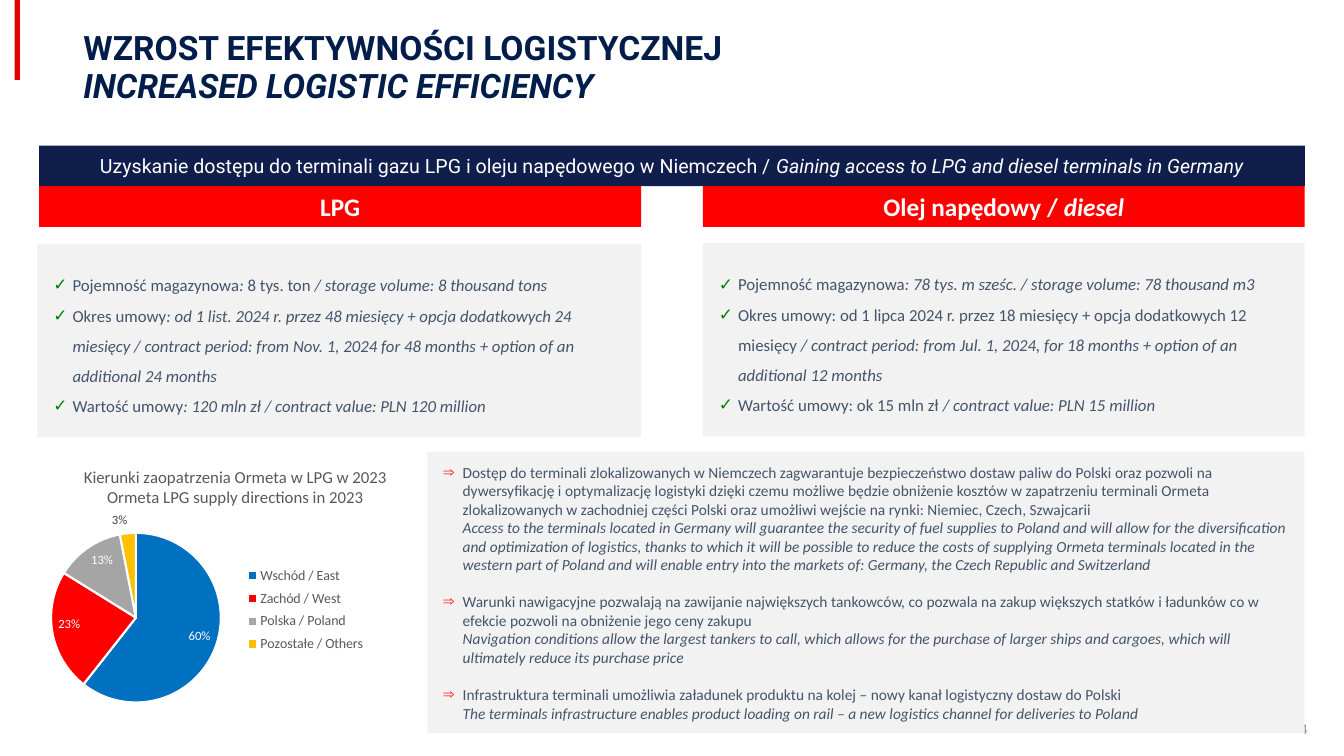
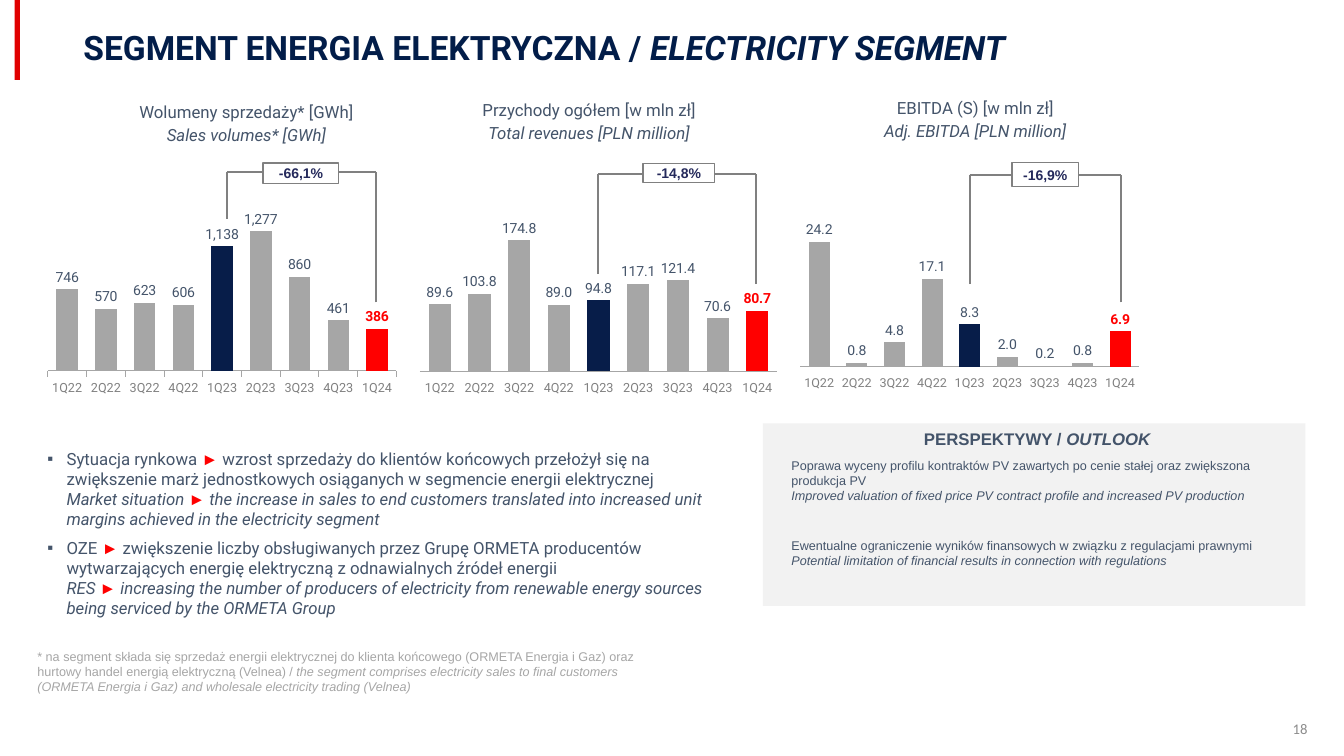
from dataclasses import dataclass

from lxml import etree
from pptx import Presentation
from pptx.chart.data import CategoryChartData
from pptx.dml.color import RGBColor
from pptx.enum import chart as ch, shapes, text
from pptx.oxml import ns
from pptx.util import Pt


@dataclass(frozen=True)
class Theme:
    accent: str = "E10000"
    title: str = "021D49"
    banner: str = "101E4B"
    red: str = "FF0000"
    panel: str = "F2F2F2"
    body: str = "44546A"
    white: str = "FFFFFF"
    number: str = "8C8C8C"
    footnote: str = "A6A6A6"
    check: str = "008000"
    bar: str = "A6A6A6"
    bar_base: str = "071D49"
    axis: str = "808080"
    bracket: str = "808080"
    change: str = "24295B"
    chart_title: str = "595959"
    pie_label: str = "404040"
    pie: tuple = ("0070C0", "FF0000", "A5A5A5", "FFC000")
    head: str = "Roboto"
    text: str = "Calibri"
    plain: str = "Arial"
    title_size: float = 24
    column_size: float = 18
    banner_size: float = 14
    body_size: float = 12
    detail_size: float = 11
    number_size: float = 10.5
    label_size: float = 10
    small_size: float = 9


T = Theme()
CENTER, RIGHT = text.PP_ALIGN.CENTER, text.PP_ALIGN.RIGHT
TOP, MIDDLE = text.MSO_ANCHOR.TOP, text.MSO_ANCHOR.MIDDLE
TEXT_INSETS = (17.3, 8.6)
PANEL_INSETS = (11.5, 14.4)
INDENT = 13.7
QUARTERS = ["1Q22", "2Q22", "3Q22", "4Q22", "1Q23", "2Q23", "3Q23", "4Q23", "1Q24"]


def points(*lengths):
    return [Pt(length) for length in lengths]


def rgb(value):
    return RGBColor.from_string(value)


def style(target, values):
    for name, value in values.items():
        setattr(target, name, value)


def set_font(font, name, size, color, **values):
    style(font, {"name": name, "size": Pt(size), **values})
    font.color.rgb = rgb(color)


def fill(target, color):
    target.fill.solid()
    target.fill.fore_color.rgb = rgb(color)


def add_bullet(paragraph, char, color):
    props = paragraph._p.get_or_add_pPr()
    props.set("marL", str(Pt(INDENT)))
    props.set("indent", str(-Pt(INDENT)))
    bullet_color = etree.SubElement(props, ns.qn("a:buClr"))
    etree.SubElement(bullet_color, ns.qn("a:srgbClr"), val=color)
    etree.SubElement(props, ns.qn("a:buFont"), typeface=T.plain)
    etree.SubElement(props, ns.qn("a:buChar"), char=char)


def write(frame, paragraphs, font, size, color, bold=False, align=None, line=None,
          before=0, bullet=None, insets=(7.2, 3.6), anchor=TOP):
    """Fill a frame; "_" switches italics and "►" becomes a red pointer."""
    side, edge = points(*insets)
    style(frame, {"word_wrap": True, "vertical_anchor": anchor, "margin_left": side,
                  "margin_right": side, "margin_top": edge, "margin_bottom": edge})
    for index, content in enumerate(paragraphs):
        paragraph = frame.add_paragraph() if index else frame.paragraphs[0]
        if bullet:
            add_bullet(paragraph, *bullet)
        style(paragraph, {"alignment": align, "line_spacing": line,
                          "space_before": Pt(before if index else 0)})
        for part_index, part in enumerate(content.split("_")):
            italic = part_index % 2 == 1
            marked = part.replace("►", "|►|").replace("\n", "|\n|")
            for piece in filter(None, marked.split("|")):
                if piece == "\n":
                    paragraph.add_line_break()
                    continue
                run = paragraph.add_run()
                run.text = piece
                if piece == "►":
                    set_font(run.font, T.plain, size, T.red)
                else:
                    set_font(run.font, font, size, color, bold=bold, italic=italic)


def add_text(slide, box, paragraphs, *args, **formats):
    write(slide.shapes.add_textbox(*points(*box)).text_frame, paragraphs, *args, **formats)


def add_block(slide, box, color, border=None):
    block = slide.shapes.add_shape(shapes.MSO_SHAPE.RECTANGLE, *points(*box))
    block.shadow.inherit = False
    fill(block, color)
    if border:
        block.line.color.rgb = rgb(border)
        block.line.width = Pt(1)
    else:
        block.line.fill.background()
    return block.text_frame


def add_line(slide, *ends):
    line = slide.shapes.add_connector(shapes.MSO_CONNECTOR.STRAIGHT, *points(*ends))
    line.line.color.rgb = rgb(T.bracket)
    line.line.width = Pt(1.5)
    etree.SubElement(line._element.spPr, ns.qn("a:effectLst"))


def add_base(deck, number, titles):
    slide = deck.slides.add_slide(deck.slide_layouts[6])
    add_block(slide, (10.4, 0, 3.8, 57), T.accent)
    add_text(slide, (685.5, 506, 255.5, 29), [str(number)], T.text, T.number_size,
             T.number, align=RIGHT, anchor=MIDDLE)
    for row, title in enumerate(titles):
        add_text(slide, (52.5, 14.4 + 27.4 * row, 882, 42), [title], T.head,
                 T.title_size, T.title, bold=True, line=0.9, anchor=MIDDLE)
    return slide


def set_layout(parent, after, inner=False, **place):
    """Give a chart part a fixed place; after is the tag it must follow, if any."""
    for old in parent.findall(ns.qn("c:layout")):
        parent.remove(old)
    layout = etree.Element(ns.qn("c:layout"))
    manual = etree.SubElement(layout, ns.qn("c:manualLayout"))
    if inner:
        etree.SubElement(manual, ns.qn("c:layoutTarget"), val="inner")
    for key in "xy":
        etree.SubElement(manual, ns.qn(f"c:{key}Mode"), val="edge")
    for key, value in place.items():
        etree.SubElement(manual, ns.qn(f"c:{key}"), val=str(value))
    if after:
        parent.find(ns.qn(after)).addnext(layout)
    else:
        parent.insert(0, layout)


def add_chart(slide, kind, box, categories, values, number_format, plot_area):
    """Add a one-series chart with value labels; return chart, plot and series."""
    data = CategoryChartData(number_format=number_format)
    data.categories = categories
    data.add_series("Series 1", values)
    chart = slide.shapes.add_chart(kind, *points(*box), data).chart
    style(chart, {"has_legend": False, "has_title": False})
    set_font(chart.font, T.text, T.label_size, T.chart_title)
    set_layout(chart._chartSpace.chart.plotArea, None, inner=True, **plot_area)
    plot = chart.plots[0]
    series = plot.series[0]
    style(series.data_labels, {"show_value": True, "show_percentage": False,
                               "number_format": number_format,
                               "number_format_is_linked": False})
    return chart, plot, series


def add_supply_pie(slide):
    chart, plot, series = add_chart(
        slide, ch.XL_CHART_TYPE.PIE, (27.4, 321, 303, 185),
        ["Wschód / East", "Zachód / West", "Polska / Poland", "Pozostałe / Others"],
        [0.6, 0.23, 0.13, 0.03], "0%", {"x": 0.03, "y": 0.32, "w": 0.4, "h": 0.66})
    plot.vary_by_categories = True
    for index, color in enumerate(T.pie):
        point = series.points[index]
        fill(point.format, color)
        point.format.line.color.rgb = rgb(T.white)
        point.format.line.width = Pt(1.5)
        outside = index == len(T.pie) - 1
        set_font(point.data_label.font, T.text, T.small_size,
                 T.pie_label if outside else T.white)
        place = ch.XL_LABEL_POSITION
        point.data_label.position = place.OUTSIDE_END if outside else place.INSIDE_END
    chart.has_title = True
    write(chart.chart_title.text_frame,
          ["Kierunki zaopatrzenia Ormeta w LPG w 2023", "Ormeta LPG supply directions in 2023"],
          T.text, T.body_size, T.chart_title, align=CENTER)
    set_layout(chart.chart_title._element, "c:tx", x=0.1, y=0.05)
    chart.has_legend = True
    style(chart.legend, {"position": ch.XL_LEGEND_POSITION.RIGHT, "include_in_layout": False})
    set_font(chart.legend.font, T.text, T.label_size, T.chart_title)
    set_layout(chart.legend._element, "c:legendPos", x=0.45, y=0.43, w=0.36, h=0.38)


def add_quarter_chart(slide, box, values, maximum, number_format, top, height, ticks=False):
    chart, plot, series = add_chart(
        slide, ch.XL_CHART_TYPE.COLUMN_CLUSTERED, box, QUARTERS, values, number_format,
        {"x": 0.02, "y": top, "w": 0.93, "h": height})
    style(plot, {"vary_by_categories": False, "gap_width": 80})
    style(chart.value_axis, {"visible": False, "has_major_gridlines": False,
                             "minimum_scale": 0, "maximum_scale": maximum})
    marks = ch.XL_TICK_MARK
    axis = chart.category_axis
    style(axis, {"major_tick_mark": marks.OUTSIDE if ticks else marks.NONE,
                 "minor_tick_mark": marks.NONE,
                 "tick_label_position": ch.XL_TICK_LABEL_POSITION.LOW})
    set_font(axis.tick_labels.font, T.head, T.small_size, T.axis)
    axis.format.line.color.rgb = rgb(T.bar)
    axis.format.line.width = Pt(0.75)
    fill(series.format, T.bar)
    for quarter, color in (("1Q23", T.bar_base), ("1Q24", T.red)):
        fill(series.points[QUARTERS.index(quarter)].format, color)
    latest = series.points[len(QUARTERS) - 1].data_label
    for labels, color, bold in ((series.data_labels, T.body, False), (latest, T.red, True)):
        set_font(labels.font, T.head, T.label_size, color, bold=bold)
        labels.position = ch.XL_LABEL_POSITION.OUTSIDE_END


def add_change(slide, change, left, left_end, right, right_end, top, box):
    """Bracket from the year-ago bar to the latest bar, with the change on it."""
    add_line(slide, left, top, right, top)
    add_line(slide, left, left_end, left, top)
    add_line(slide, right, right_end, right, top)
    write(add_block(slide, box, T.white, T.bracket), [change], T.plain, T.label_size,
          T.change, bold=True, align=CENTER, insets=(0, 3.6), anchor=MIDDLE)


def add_fuel(slide, left, top, inset, name, terms):
    write(add_block(slide, (left, 133, 430, 29), T.red), [name], T.text, T.column_size,
          T.white, bold=True, align=CENTER, anchor=MIDDLE)
    write(add_block(slide, (left - inset, top, 430 + inset, 138.2), T.panel), terms, T.text,
          T.body_size, T.body, line=1.5, bullet=("✓", T.check), insets=PANEL_INSETS,
          anchor=MIDDLE)


def build_logistics(deck):
    slide = add_base(deck, 4, ["WZROST EFEKTYWNOŚCI LOGISTYCZNEJ",
                               "_INCREASED LOGISTIC EFFICIENCY_"])
    add_supply_pie(slide)
    write(add_block(slide, (28, 104, 904, 29), T.banner),
          ["Uzyskanie dostępu do terminali gazu LPG i oleju napędowego w Niemczech / "
           "_Gaining access to LPG and diesel terminals in Germany_"],
          T.head, T.banner_size, T.white, align=CENTER, anchor=MIDDLE)
    add_fuel(slide, 28, 174.2, 1.4, "LPG", [
        "Pojemność magazynowa_: _8 tys. ton _/ storage volume: 8 thousand tons_",
        "Okres umowy_: od 1 list. 2024 r. przez 48 miesięcy + opcja dodatkowych 24 miesięcy / "
        "contract period: from Nov. 1, 2024 for 48 months + option of an additional 24 months_",
        "Wartość umowy_: 120 mln zł / contract value: PLN 120 million_"])
    add_fuel(slide, 502, 173.5, 0, "Olej napędowy / _diesel_", [
        "Pojemność magazynowa_: 78 tys. m sześc. / storage volume: 78 thousand m3_",
        "Okres umowy: od 1 lipca 2024 r. przez 18 miesięcy + opcja dodatkowych 12 miesięcy_ / "
        "contract period: from Jul. 1, 2024, for 18 months + option of an additional 12 months_",
        "Wartość umowy: ok 15 mln zł _/ contract value: PLN 15 million_"])
    write(add_block(slide, (305.3, 322.6, 626.4, 201), T.panel), [
        "Dostęp do terminali zlokalizowanych w Niemczech zagwarantuje bezpieczeństwo dostaw "
        "paliw do Polski oraz pozwoli na dywersyfikację i optymalizację logistyki dzięki czemu "
        "możliwe będzie obniżenie kosztów w zapatrzeniu terminali Ormeta zlokalizowanych w "
        "zachodniej części Polski oraz umożliwi wejście na rynki: Niemiec, Czech, Szwajcarii\n"
        "_Access to the terminals located in Germany will guarantee the security of fuel "
        "supplies to Poland and will allow for the diversification and optimization of "
        "logistics, thanks to which it will be possible to reduce the costs of supplying Ormeta "
        "terminals located in the western part of Poland and will enable entry into the markets "
        "of: Germany, the Czech Republic and Switzerland_",
        "Warunki nawigacyjne pozwalają na zawijanie największych tankowców, co pozwala na zakup "
        "większych statków i ładunków co w efekcie pozwoli na obniżenie jego ceny zakupu\n"
        "_Navigation conditions allow the largest tankers to call, which allows for the purchase "
        "of larger ships and cargoes, which will ultimately reduce its purchase price_",
        "Infrastruktura terminali umożliwia załadunek produktu na kolej – nowy kanał "
        "logistyczny dostaw do Polski\n_The terminals infrastructure enables product loading on "
        "rail – a new logistics channel for deliveries to Poland_"],
        T.text, T.detail_size, T.body, before=13.4, bullet=("⇒", T.red),
        insets=PANEL_INSETS, anchor=MIDDLE)


def build_electricity(deck):
    slide = add_base(deck, 18, ["SEGMENT ENERGIA ELEKTRYCZNA / _ELECTRICITY SEGMENT_"])
    add_quarter_chart(slide, (28.8, 144.7, 267.8, 156.2),
                      [746, 570, 623, 606, 1138, 1277, 860, 461, 386],
                      1400, "#,##0", 0.07, 0.7, ticks=True)
    add_quarter_chart(slide, (294.5, 156.2, 274.3, 141.8),
                      [89.6, 103.8, 174.8, 89, 94.8, 117.1, 121.4, 70.6, 80.7],
                      180, "0.0", 0.09, 0.68)
    add_quarter_chart(slide, (566.6, 137.5, 260, 141.8),
                      [24.2, 0.8, 4.8, 17.1, 8.3, 2, 0.2, 0.8, 6.9], 30, "0.0", 0.1, 0.8)
    for left, top, polish, english in (
            (64.8, 62, "Wolumeny sprzedaży* [GWh]", "Sales volumes* [GWh]"),
            (309.6, 60.5, "Przychody ogółem [w mln zł]", "Total revenues [PLN million]"),
            (585.4, 59, "EBITDA (S) [w mln zł]", "Adj. EBITDA [PLN million]")):
        add_text(slide, (left, top, 222.5, 49), [polish, f"_{english}_"], T.head, T.body_size,
                 T.body, align=CENTER, line=1.14, insets=TEXT_INSETS)
    add_change(slide, "-66,1%", 162, 156.2, 268.6, 216, 122.8, (188, 116.6, 54, 14.4))
    add_change(slide, "-14,8%", 427, 195.8, 540, 203, 124.3, (459.4, 116.6, 51, 13.7))
    add_change(slide, "-16,9%", 692.6, 203, 800.6, 216, 125, (722.9, 116, 47.5, 17.3))
    add_text(slide, (9.4, 455, 474, 50),
             ["* na segment składa się sprzedaż energii elektrycznej do klienta końcowego "
              "(ORMETA Energia i Gaz) oraz hurtowy handel energią elektryczną (Velnea) / "
              "_the segment comprises electricity sales to final customers "
              "(ORMETA Energia i Gaz) and wholesale electricity trading (Velnea)_"],
             T.plain, T.small_size, T.footnote, insets=TEXT_INSETS)
    add_text(slide, (16.6, 311.8, 525.6, 140), [
        "Sytuacja rynkowa ► wzrost sprzedaży do klientów końcowych przełożył się na zwiększenie "
        "marż jednostkowych osiąganych w segmencie energii elektrycznej\n"
        "_Market situation ► the increase in sales to end customers translated into increased "
        "unit margins achieved in the electricity segment_",
        "OZE ► zwiększenie liczby obsługiwanych przez Grupę ORMETA producentów wytwarzających "
        "energię elektryczną z odnawialnych źródeł energii\n"
        "_RES ► increasing the number of producers of electricity from renewable energy sources "
        "being serviced by the ORMETA Group_"],
        T.head, T.body_size, T.body, before=6, bullet=("▪", T.body), insets=TEXT_INSETS)
    add_block(slide, (545, 302.4, 387.4, 130.3), T.panel)
    add_text(slide, (548.6, 303, 384.5, 21.6), ["PERSPEKTYWY / _OUTLOOK_"], T.plain,
             T.body_size, T.body, bold=True, align=CENTER)
    add_text(slide, (548, 318.2, 385.2, 105), [
        "Poprawa wyceny profilu kontraktów PV zawartych po cenie stałej oraz zwiększona "
        "produkcja PV\n_Improved valuation of fixed price PV contract profile and increased PV "
        "production_",
        "Ewentualne ograniczenie wyników finansowych w związku z regulacjami prawnymi\n"
        "_Potential limitation of financial results in connection with regulations_"],
        T.plain, T.small_size, T.body, before=25, insets=TEXT_INSETS)


def main():
    deck = Presentation()
    style(deck, {"slide_width": Pt(960), "slide_height": Pt(540)})
    build_logistics(deck)
    build_electricity(deck)
    deck.save("out.pptx")


if __name__ == "__main__":
    main()
